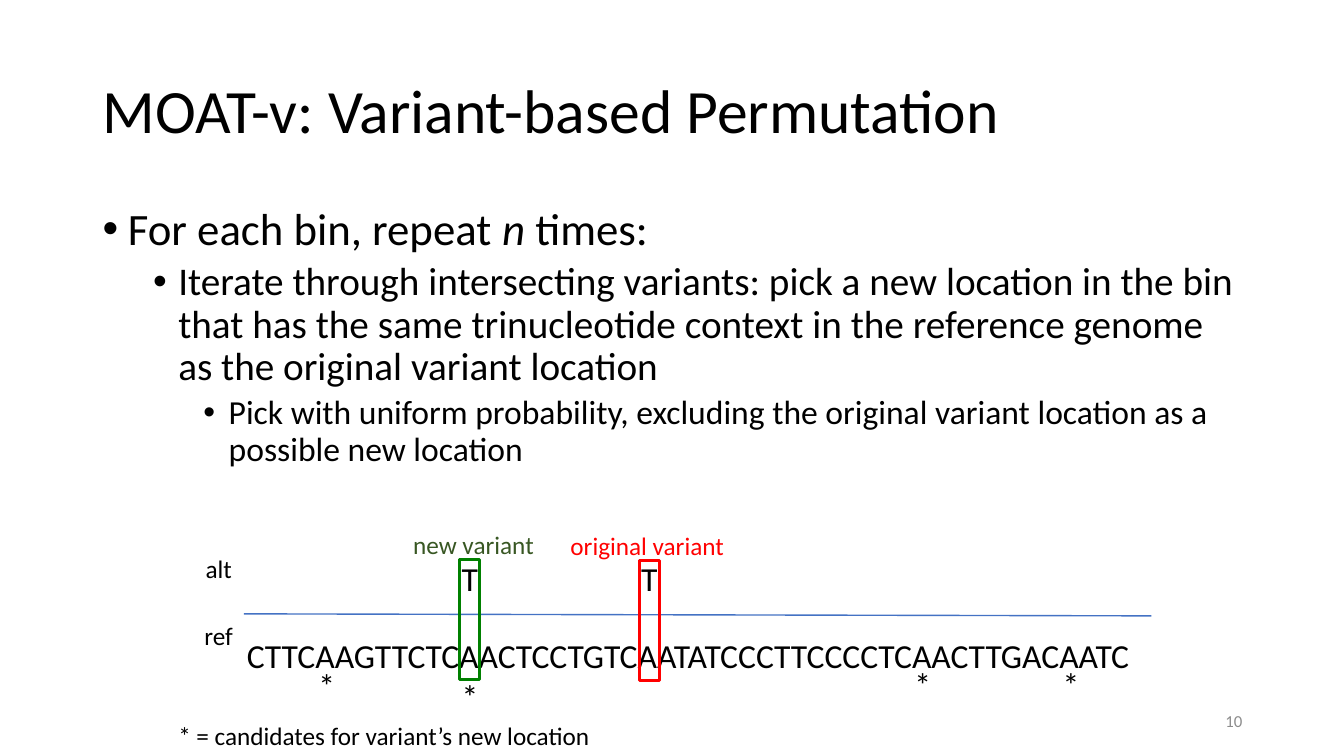
from pptx import Presentation
from pptx import util as u
from pptx.dml.color import RGBColor
from pptx.enum import shapes, text
from pptx.oxml.ns import qn
from lxml import etree

BLACK, RED, GREEN = "000000", "FF0000", "008000"
DARK_GREEN, BLUE, GREY = "385723", "4472C4", "8C8C8C"
MIDDLE = text.MSO_ANCHOR.MIDDLE


def rgb(value):
    return RGBColor.from_string(value)


def set_attrs(obj, values):
    for name, value in values.items():
        setattr(obj, name, value)


def add_run(p, wording, size, color=BLACK, italic=False):
    r = p.add_run()
    r.text = wording
    set_attrs(r.font, {"name": "Calibri", "size": u.Pt(size), "italic": italic})
    r.font.color.rgb = rgb(color)


def add_box(slide, box, wrap=True, anchor=text.MSO_ANCHOR.TOP):
    tf = slide.shapes.add_textbox(*map(u.Inches, box)).text_frame
    set_attrs(tf, {"word_wrap": wrap, "vertical_anchor": anchor})
    return tf


def add_label(slide, box, wording, size=18, color=BLACK, wrap=False):
    tf = add_box(slide, box, wrap)
    add_run(tf.paragraphs[0], wording, size, color)


def set_bullet(p, level):
    pPr = p._p.get_or_add_pPr()
    pPr.set("marL", str(u.Inches(0.25 + 0.5 * level)))
    pPr.set("indent", str(u.Inches(-0.25)))
    font = etree.SubElement(pPr, qn("a:buFont"))
    font.set("typeface", "Arial")
    etree.SubElement(pPr, qn("a:buChar")).set("char", "•")


def add_title(slide, box):
    p = add_box(slide, box, anchor=MIDDLE).paragraphs[0]
    p.line_spacing = 0.9
    add_run(p, "MOAT-v: Variant-based Permutation", 44)


def add_body(slide, box):
    # Each item: size, space before, runs as (wording, italic)
    items = [
        (32, 10, [("For each bin, repeat ", False), ("n", True), (" times:", False)]),
        (28, 5, [("Iterate through intersecting variants: pick a new location in "
                  "the bin that has the same trinucleotide context in the "
                  "reference genome as the original variant location", False)]),
        (24, 5, [("Pick with uniform probability, excluding the original variant "
                  "location as a possible new location", False)]),
    ]
    tf = add_box(slide, box)
    for level, (size, before, runs) in enumerate(items):
        p = tf.paragraphs[0] if level == 0 else tf.add_paragraph()
        set_attrs(p, {"level": level, "line_spacing": 0.9,
                      "space_before": u.Pt(before)})
        set_bullet(p, level)
        for wording, italic in runs:
            add_run(p, wording, size, italic=italic)


def add_frame(slide, box, color):
    sp = slide.shapes.add_shape(shapes.MSO_SHAPE.RECTANGLE, *map(u.Inches, box))
    sp.shadow.inherit = False
    sp.fill.background()
    sp.line.color.rgb = rgb(color)
    sp.line.width = u.Pt(2)


def add_sequence(slide, box):
    x, y, width, height = box

    # Line between the alternative and the reference
    line = slide.shapes.add_connector(
        shapes.MSO_CONNECTOR.STRAIGHT, u.Inches(x + 0.75), u.Inches(y + 0.89),
        u.Inches(x + 9.75), u.Inches(y + 0.91))
    line.line.color.rgb = rgb(BLUE)
    line.line.width = u.Pt(1)
    etree.SubElement(line._element.spPr, qn("a:effectLst"))

    # Rows
    add_label(slide, (x + 0.68, y + 1.05, width - 0.68, 0.5),
              "CTTCAAGTTCTCAACTCCTGTCAATATCCCTTCCCCTCAACTTGACAATC", 24, wrap=True)
    add_label(slide, (x + 0.26, y + 0.9, 0.5, 0.4), "ref")
    add_label(slide, (x + 0.27, y + 0.24, 0.47, 0.4), "alt")

    # Variants: frame left, frame top, frame colour, caption box, caption, colour
    variants = [
        (4.67, 0.36, RED, (3.89, 0.01, 1.77), "original variant", RED),
        (2.89, 0.35, GREEN, (2.33, 0, 1.44), "new variant", DARK_GREEN),
    ]
    for left, top, color, (cx, cy, cw), caption, caption_color in variants:
        add_label(slide, (x + left - 0.08, y + 0.29, 0.37, 0.5), "T", 24)
        add_frame(slide, (x + left, y + top, 0.2, 1.19), color)
        add_label(slide, (x + cx, y + cy, cw, 0.4), caption, color=caption_color)

    # Candidate locations and their key
    for left, top in [(1.39, 1.35), (2.81, 1.46), (7.3, 1.34), (8.77, 1.34)]:
        add_label(slide, (x + left, y + top, 0.37, 0.5), "*", 24)
    add_label(slide, (x, y + height - 0.4, 4.33, 0.4),
              "* = candidates for variant’s new location")


def add_page_number(slide, box):
    p = add_box(slide, box, anchor=MIDDLE).paragraphs[0]
    p.alignment = text.PP_ALIGN.RIGHT
    add_run(p, "10", 12, GREY)


def main():
    prs = Presentation()
    set_attrs(prs, {"slide_width": u.Inches(13.33), "slide_height": u.Inches(7.5)})
    slide = prs.slides.add_slide(prs.slide_layouts[6])
    add_title(slide, (0.92, 0.4, 11.5, 1.45))
    add_body(slide, (0.92, 2, 11.5, 4.76))
    add_page_number(slide, (9.42, 6.95, 3, 0.4))
    add_sequence(slide, (1.67, 5.2, 9.89, 2.3))
    prs.save("out.pptx")


if __name__ == "__main__":
    main()
